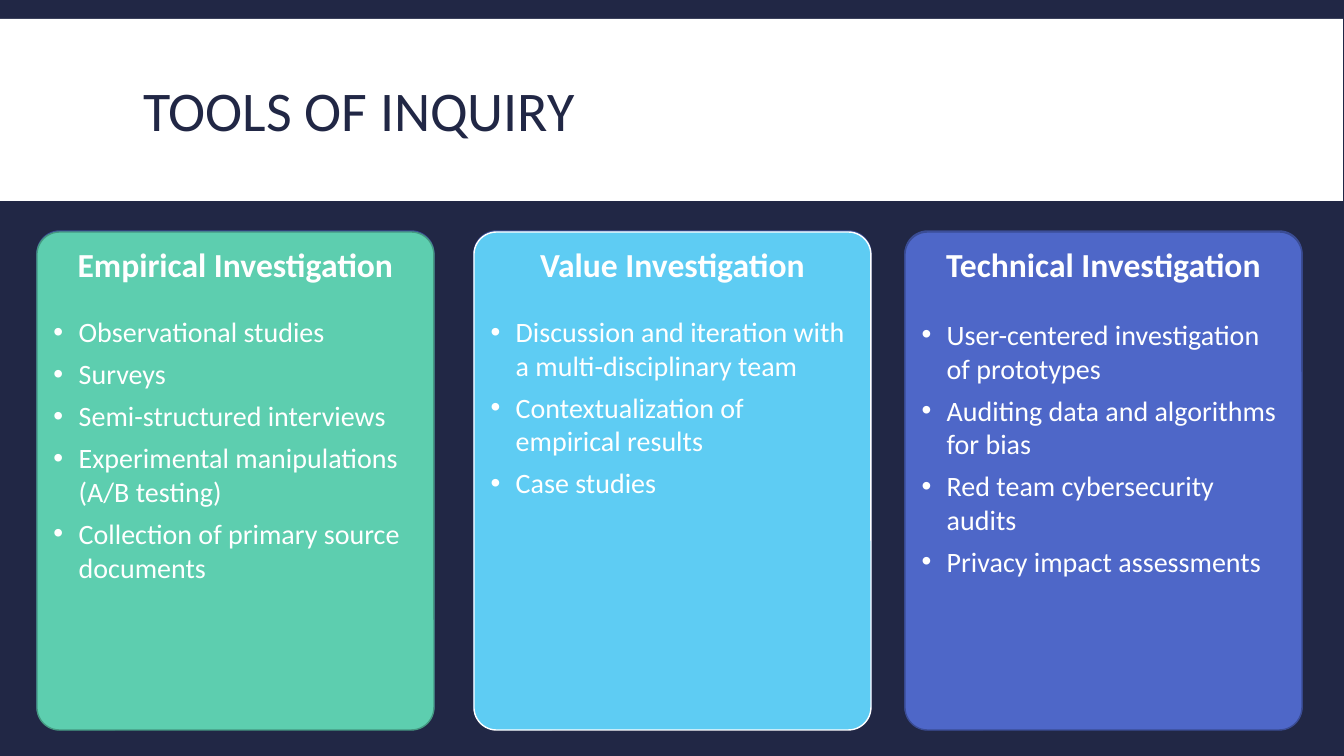
from pptx import Presentation
from pptx import util as u
from pptx.dml.color import RGBColor
from pptx.enum import shapes, text
from lxml import etree

PX = 12192000 / 1344  # EMU in one px of a 1344 x 756 slide
NAVY, WHITE, INDIGO, INDIGO_EDGE = "212745", "FFFFFF", "4E67C8", "3A4C94"
FONT = "Calibri"
DRAWING = "{http://schemas.openxmlformats.org/drawingml/2006/main}"


def box(kind, left, top, width, height, fill, edge=None):
    shape = slide.shapes.add_shape(kind, *(round(n * PX) for n in (left, top, width, height)))
    shape.shadow.inherit = False
    shape.fill.solid()
    shape.fill.fore_color.rgb = RGBColor.from_string(fill)
    if edge:
        shape.adjustments[0] = 0.057
        shape.line.color.rgb = RGBColor.from_string(edge)
        shape.line.width = u.Pt(1)
    else:
        shape.line.fill.background()
    return shape


def style(paragraph, size, color, bold=False):
    for run in paragraph.runs:
        run.font.name = FONT
        run.font.size = u.Pt(size)
        run.font.bold = bold
        run.font.color.rgb = RGBColor.from_string(color)


presentation = Presentation()
presentation.slide_width = round(1344 * PX)
presentation.slide_height = round(756 * PX)
slide = presentation.slides.add_slide(presentation.slide_layouts[5])
slide.background.fill.solid()
slide.background.fill.fore_color.rgb = RGBColor.from_string(NAVY)

# Title on its white band, which goes behind the title
band = box(shapes.MSO_SHAPE.RECTANGLE, 0, 19, 1343, 182, WHITE)
title = slide.shapes.title
title._element.addprevious(band._element)
title.left, title.top, title.width, title.height = (round(n * PX) for n in (133, 31, 1079, 166))
title_frame = title.text_frame
title_frame.text = "TOOLS OF INQUIRY"
title_frame.auto_size = text.MSO_AUTO_SIZE.NONE
title_frame.vertical_anchor = text.MSO_ANCHOR.MIDDLE
title_frame.paragraphs[0].alignment = text.PP_ALIGN.LEFT
title_frame.paragraphs[0].line_spacing = 0.85
style(title_frame.paragraphs[0], 40, NAVY)

# Cards: left, fill, edge, gap below heading in points, heading, items
cards = [
    (37, "5DCEAF", "459881", 22, "Empirical Investigation", [
        "Observational studies",
        "Surveys",
        "Semi-structured interviews",
        "Experimental manipulations (A/B testing)",
        "Collection of primary source documents",
    ]),
    (474, "5ECCF3", WHITE, 22, "Value Investigation", [
        "Discussion and iteration with a multi-disciplinary team",
        "Contextualization of empirical results",
        "Case studies",
    ]),
    (905, INDIGO, INDIGO_EDGE, 24, "Technical Investigation", [
        "User-centered investigation of prototypes",
        "Auditing data and algorithms for bias",
        "Red team cybersecurity audits",
        "Privacy impact assessments",
    ]),
]
ROUNDED = shapes.MSO_SHAPE.ROUNDED_RECTANGLE

for left, fill, edge, gap, heading, items in cards:
    # Backing card, showing as a thin rim
    box(ROUNDED, left, 231, 397, 498, INDIGO, INDIGO_EDGE)
    card = box(ROUNDED, left, 232, 397, 498, fill, edge)
    frame = card.text_frame
    frame.word_wrap = True
    frame.vertical_anchor = text.MSO_ANCHOR.TOP
    frame.text = heading
    frame.paragraphs[0].alignment = text.PP_ALIGN.CENTER
    frame.paragraphs[0].space_after = u.Pt(gap)
    style(frame.paragraphs[0], 24, WHITE, bold=True)

    # Bulleted list
    for item in items:
        paragraph = frame.add_paragraph()
        paragraph.text = item
        paragraph.alignment = text.PP_ALIGN.LEFT
        paragraph.space_after = u.Pt(6)
        style(paragraph, 20, WHITE)
        properties = paragraph._p.get_or_add_pPr()
        properties.set("marL", str(u.Inches(0.25)))
        properties.set("indent", str(-u.Inches(0.25)))
        etree.SubElement(properties, DRAWING + "buFont", typeface="Arial")
        etree.SubElement(properties, DRAWING + "buChar", char="•")

presentation.save("out.pptx")
